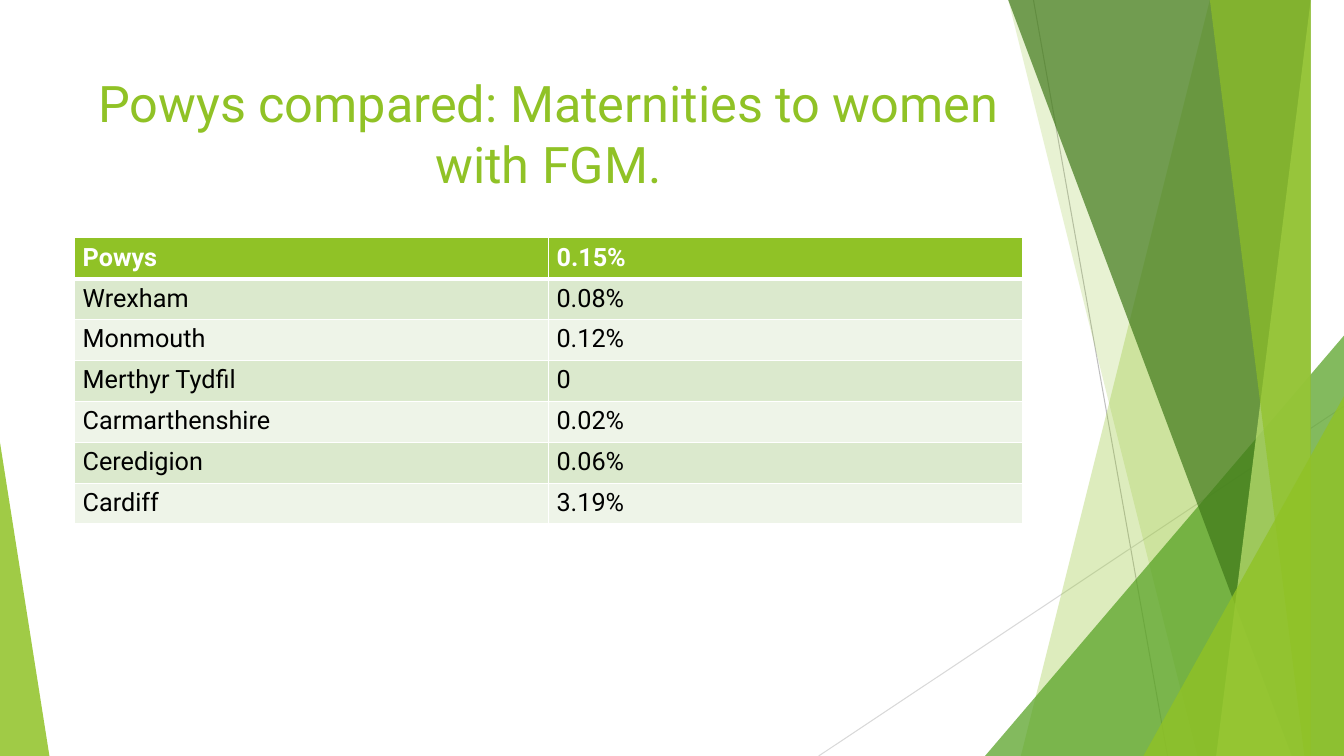
from dataclasses import dataclass

import lxml.etree
import pptx
import pptx.dml.color
import pptx.enum.shapes
import pptx.enum.text
import pptx.oxml.ns
import pptx.util

Inches = pptx.util.Inches
Pt = pptx.util.Pt
qn = pptx.oxml.ns.qn

FONT = "Roboto"
GREEN, WHITE, BLACK = "90C226", "FFFFFF", "000000"
BANDS = ["EEF4E8", "DBE9CD"]
WIDTH, HEIGHT, TOP = 13.33, 7.5, -0.01


@dataclass
class Ray:
    start: tuple[float, float]
    end: tuple[float, float]
    color: str


@dataclass
class Shard:
    """Slanted panel that runs to the right edge of the slide."""
    top_left: float
    bottom_left: float
    color: str
    opacity: int


@dataclass
class Wedge:
    """Triangle standing on the bottom edge of the slide."""
    left: float
    top: float
    width: float
    apex: float
    color: str
    opacity: int


RAYS = [
    Ray((10.25, 0), (11.58, HEIGHT), "BFBFBF"),
    Ray((WIDTH, 4.03), (8.12, HEIGHT), "D9D9D9"),
]
FACETS = [
    Shard(12.28, 10.04, GREEN, 30),
    Shard(10.5, 11.83, GREEN, 20),
    Wedge(9.77, 3.33, 3.56, 1, "54A021", 72),
    Shard(10.21, 12.91, "3F7819", 70),
    Shard(13.03, 11.92, "C0E474", 70),
    Shard(11.96, 13.18, GREEN, 65),
    Wedge(11.34, 3.93, 1.99, 1, GREEN, 80),
    Wedge(0, 4.39, 0.49, 0, GREEN, 85),
]
RATES = [
    ("Powys", "0.15%"),
    ("Wrexham", "0.08%"),
    ("Monmouth", "0.12%"),
    ("Merthyr Tydfil", "0"),
    ("Carmarthenshire", "0.02%"),
    ("Ceredigion", "0.06%"),
    ("Cardiff", "3.19%"),
]


def rgb(color: str) -> pptx.dml.color.RGBColor:
    return pptx.dml.color.RGBColor.from_string(color)


def apply_format(target, values: dict) -> None:
    for name, value in values.items():
        setattr(target, name, value)


def style_font(font, size: float, color: str, bold: bool = False) -> None:
    apply_format(font, {"name": FONT, "size": Pt(size), "bold": bold})
    font.color.rgb = rgb(color)


def draw_ray(slide, ray: Ray) -> None:
    line = slide.shapes.add_connector(
        pptx.enum.shapes.MSO_CONNECTOR.STRAIGHT,
        *map(Inches, ray.start + ray.end))
    line.line.width = Pt(0.75)
    line.line.color.rgb = rgb(ray.color)
    lxml.etree.SubElement(line._element.spPr, qn("a:effectLst"))


def draw_facet(slide, facet: Shard | Wedge) -> None:
    if isinstance(facet, Shard):
        outline = slide.shapes.build_freeform(
            facet.top_left, TOP, scale=Inches(1))
        outline.add_line_segments(
            [(WIDTH, TOP), (WIDTH, HEIGHT), (facet.bottom_left, HEIGHT)])
        shape = outline.convert_to_shape()
    else:
        shape = slide.shapes.add_shape(
            pptx.enum.shapes.MSO_SHAPE.ISOSCELES_TRIANGLE,
            Inches(facet.left), Inches(facet.top),
            Inches(facet.width), Inches(HEIGHT - facet.top))
        shape.adjustments[0] = facet.apex
    shape.shadow.inherit = False
    shape.line.fill.background()
    shape.fill.solid()
    shape.fill.fore_color.rgb = rgb(facet.color)
    color = shape._element.spPr.find(qn("a:solidFill"))[0]
    lxml.etree.SubElement(color, qn("a:alpha"), val=str(facet.opacity * 1000))


def draw_title(slide, text: str) -> None:
    title = slide.shapes.add_textbox(
        Inches(0.74), Inches(0.67), Inches(9.4), Inches(1.44))
    apply_format(title.text_frame, {
        "word_wrap": True,
        "vertical_anchor": pptx.enum.text.MSO_ANCHOR.TOP,
        "text": text,
    })
    paragraph = title.text_frame.paragraphs[0]
    paragraph.alignment = pptx.enum.text.PP_ALIGN.CENTER
    style_font(paragraph.runs[0].font, 36, GREEN)


def set_borders(cell, widths: dict[str, float]) -> None:
    properties = cell._tc.get_or_add_tcPr()
    for side, width in widths.items():
        border = lxml.etree.SubElement(
            properties, qn(f"a:ln{side}"), w=str(Pt(width)))
        fill = lxml.etree.SubElement(border, qn("a:solidFill"))
        lxml.etree.SubElement(fill, qn("a:srgbClr"), val=WHITE)


def draw_table(slide, rates: list[tuple[str, str]]) -> None:
    table = slide.shapes.add_table(
        len(rates), 2, Inches(0.74), Inches(2.36),
        Inches(9.4), Inches(2.84)).table
    for row, texts in enumerate(rates):
        header = row == 0
        for column, text in enumerate(texts):
            cell = table.cell(row, column)
            apply_format(cell, {
                "text": text,
                "margin_left": Inches(0.08), "margin_right": Inches(0.08),
                "margin_top": Inches(0.05), "margin_bottom": Inches(0.05),
            })
            # Thick rule between the header and the first body row
            set_borders(cell, {"L": 1, "R": 1, "T": 3 if row == 1 else 1,
                               "B": 3 if header else 1})
            cell.fill.solid()
            cell.fill.fore_color.rgb = rgb(GREEN if header else BANDS[row % 2])
            style_font(cell.text_frame.paragraphs[0].runs[0].font, 18,
                       WHITE if header else BLACK, header)


def main() -> None:
    deck = pptx.Presentation()
    apply_format(deck, {"slide_width": Inches(WIDTH),
                        "slide_height": Inches(HEIGHT)})
    slide = deck.slides.add_slide(deck.slide_layouts[6])

    # Faceted backdrop
    for ray in RAYS:
        draw_ray(slide, ray)
    for facet in FACETS:
        draw_facet(slide, facet)

    # Content
    draw_title(slide, "Powys compared: Maternities to women with FGM.")
    draw_table(slide, RATES)
    deck.save("out.pptx")


if __name__ == "__main__":
    main()
